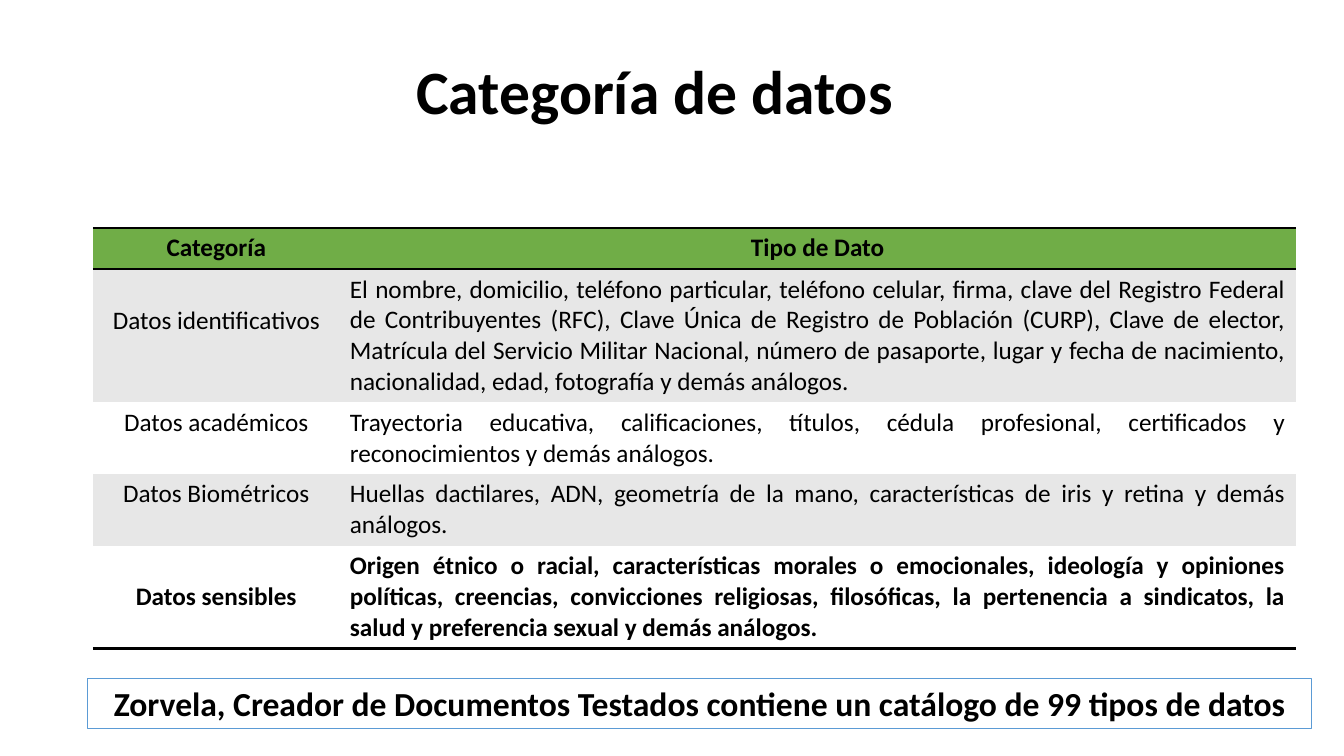
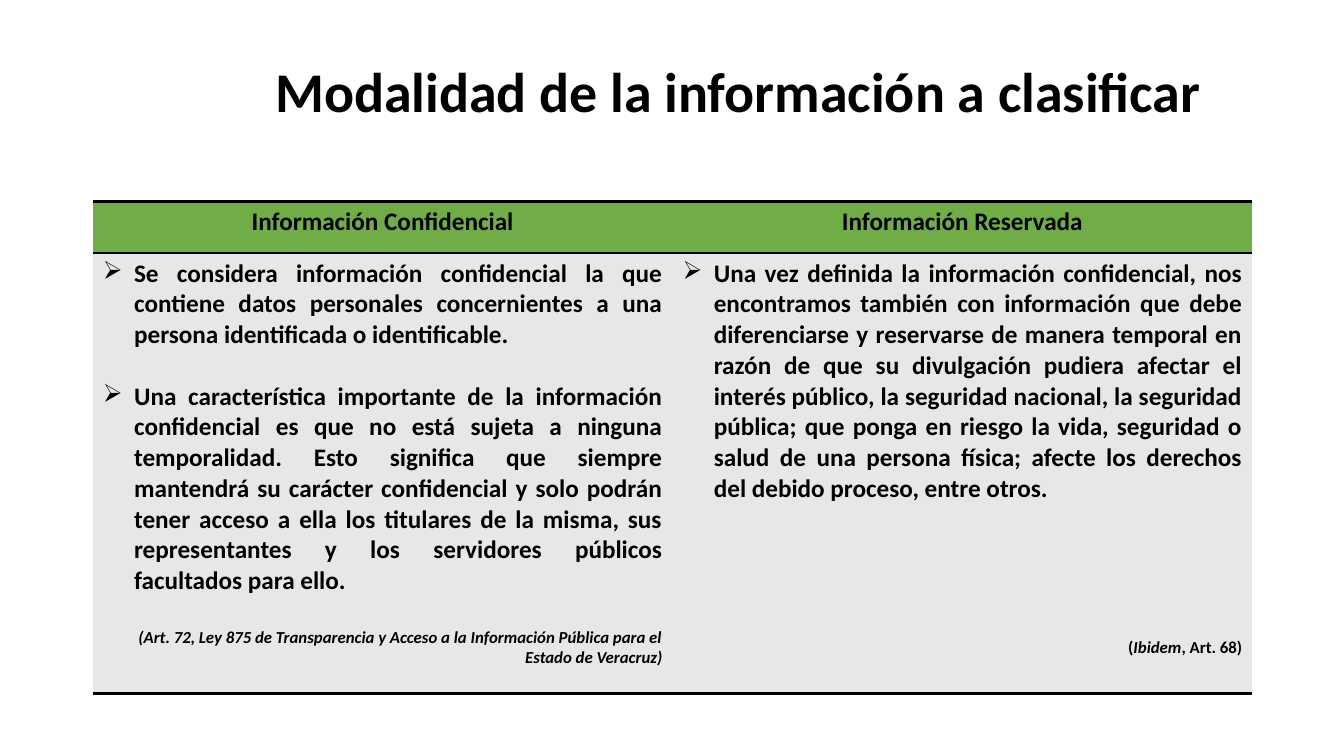
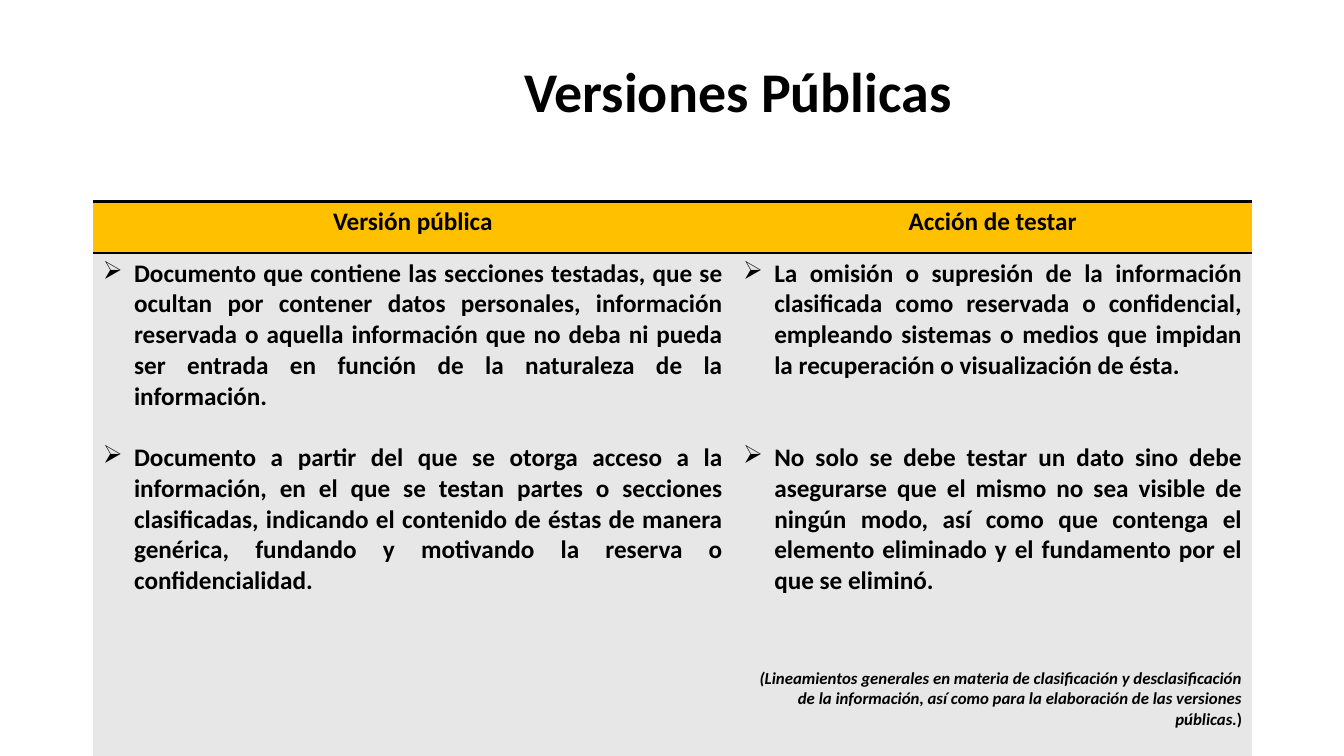
from lxml import etree
from pptx import Presentation
from pptx.dml.color import RGBColor
from pptx.enum.shapes import MSO_SHAPE
from pptx.enum.text import MSO_ANCHOR, MSO_AUTO_SIZE, PP_ALIGN
from pptx.oxml.ns import qn
from pptx.util import Inches, Pt

BLACK = RGBColor(0x00, 0x00, 0x00)
WHITE = RGBColor(0xFF, 0xFF, 0xFF)
GREEN = RGBColor(0x70, 0xAD, 0x47)
GOLD = RGBColor(0xFF, 0xC0, 0x00)
GREY = RGBColor(0xE7, 0xE7, 0xE7)
BLUE = RGBColor(0x5B, 0x9B, 0xD5)

LEFT, CENTER, RIGHT = PP_ALIGN.LEFT, PP_ALIGN.CENTER, PP_ALIGN.RIGHT
JUSTIFY = PP_ALIGN.JUSTIFY
MIDDLE, NO_FIT = MSO_ANCHOR.MIDDLE, MSO_AUTO_SIZE.NONE
RECT = MSO_SHAPE.RECTANGLE

FONT = "Calibri"
PLAIN = "{2D5ABB26-0587-4C30-8999-92F81FD0307C}"  # table style without grid
BODY, SMALL = 18, 12
LINE, THIN = 22, 14.6  # heights in points of a body line and a small line
EDGE = 0.92
HANG = 0.31
HEAD = 0.51

TYPES = [
    ("Datos identificativos",
     "El nombre, domicilio, teléfono particular, teléfono celular, firma, clave del Registro "
     "Federal de Contribuyentes (RFC), Clave Única de Registro de Población (CURP), Clave de "
     "elector, Matrícula del Servicio Militar Nacional, número de pasaporte, lugar y fecha de "
     "nacimiento, nacionalidad, edad, fotografía y demás análogos."),
    ("Datos académicos",
     "Trayectoria educativa, calificaciones, títulos, cédula profesional, certificados y "
     "reconocimientos y demás análogos."),
    ("Datos Biométricos",
     "Huellas dactilares, ADN, geometría de la mano, características de iris y retina y demás "
     "análogos."),
    ("Datos sensibles",
     "Origen étnico o racial, características morales o emocionales, ideología y opiniones "
     "políticas, creencias, convicciones religiosas, filosóficas, la pertenencia a sindicatos, "
     "la salud y preferencia sexual y demás análogos."),
]

# Each column: heading, bullets as (space before, text), source as (space before, runs)
MODES = [
    ("Información Confidencial",
     [(0, "Se considera información confidencial la que contiene datos personales "
          "concernientes a una persona identificada o identificable."),
      (LINE, "Una característica importante de la información confidencial es que no está "
             "sujeta a ninguna temporalidad. Esto significa que siempre mantendrá su carácter "
             "confidencial y solo podrán tener acceso a ella los titulares de la misma, sus "
             "representantes y los servidores públicos facultados para ello.")],
     (LINE, [("(Art. 72, Ley 875 de Transparencia y Acceso a la Información Pública para el "
              "Estado de Veracruz)", True)])),
    ("Información Reservada",
     [(0, "Una vez definida la información confidencial, nos encontramos también con "
          "información que debe diferenciarse y reservarse de manera temporal en razón de que "
          "su divulgación pudiera afectar el interés público, la seguridad nacional, la "
          "seguridad pública; que ponga en riesgo la vida, seguridad o salud de una persona "
          "física; afecte los derechos del debido proceso, entre otros.")],
     (3 * LINE + 2 * THIN, [("(", False), ("Ibidem", True), (", Art. 68)", False)])),
]

VERSIONS = [
    ("Versión pública",
     [(0, "Documento que contiene las secciones testadas, que se ocultan por contener datos "
          "personales, información reservada o aquella información que no deba ni pueda ser "
          "entrada en función de la naturaleza de la información."),
      (LINE, "Documento a partir del que se otorga acceso a la información, en el que se "
             "testan partes o secciones clasificadas, indicando el contenido de éstas de "
             "manera genérica, fundando y motivando la reserva o confidencialidad.")],
     None),
    ("Acción de testar",
     [(0, "La omisión o supresión de la información clasificada como reservada o "
          "confidencial, empleando sistemas o medios que impidan la recuperación o "
          "visualización de ésta."),
      (2 * LINE, "No solo se debe testar un dato sino debe asegurarse que el mismo no sea "
                 "visible de ningún modo, así como que contenga el elemento eliminado y el "
                 "fundamento por el que se eliminó.")],
     (LINE + 2 * THIN, [("(Lineamientos generales en materia de clasificación y "
                         "desclasificación de la información, así como para la elaboración de "
                         "las versiones públicas.", True), (")", False)])),
]


def style(run, size=BODY, bold=True, italic=False):
    font = run.font
    font.name, font.size = FONT, Pt(size)
    font.bold, font.italic = bold, italic
    font.color.rgb = BLACK


def write(par, text, align, size=BODY, bold=True):
    par.text = text
    par.alignment = align
    style(par.runs[0], size, bold)


def rule(cell, side):
    """Draw a black line on one side ("T" or "B") of a cell."""
    line = etree.SubElement(cell._tc.get_or_add_tcPr(), qn("a:ln" + side), w=str(Pt(2)))
    fill = etree.SubElement(line, qn("a:solidFill"))
    etree.SubElement(fill, qn("a:srgbClr"), val=str(BLACK))


def paint(cell, color, sides=""):
    """Lines come before the fill, as the file format asks."""
    for side in sides:
        rule(cell, side)
    cell.fill.solid()
    cell.fill.fore_color.rgb = color


def add_title(deck, text, width, size):
    slide = deck.slides.add_slide(deck.slide_layouts[5])
    title = slide.shapes.title
    title.left, title.top = Inches(2.55), Inches(0.49)
    title.width, title.height = Inches(width), Inches(0.81)
    title.fill.solid()
    title.fill.fore_color.rgb = WHITE
    frame = title.text_frame
    frame.auto_size, frame.vertical_anchor = NO_FIT, MIDDLE
    frame.word_wrap = True
    write(frame.paragraphs[0], text, CENTER, size)
    return slide


def add_grid(slide, top, cols, rows, heads, color):
    """Place a plain table with its heading row filled in."""
    frame = slide.shapes.add_table(len(rows), len(cols), Inches(EDGE), Inches(top),
                                   Inches(sum(cols)), Inches(sum(rows)))
    table = frame.table
    table._tbl.tblPr.find(qn("a:tableStyleId")).text = PLAIN
    table.horz_banding = False
    for col, width in zip(table.columns, cols):
        col.width = Inches(width)
    for row, height in zip(table.rows, rows):
        row.height = Inches(height)
    for cell, head in zip(table.rows[0].cells, heads):
        write(cell.text_frame.paragraphs[0], head, CENTER)
        paint(cell, color, "TB")
    return table


def add_bullet(par, gap, text):
    props = par._p.get_or_add_pPr()
    props.set("marL", str(Inches(HANG)))
    props.set("indent", str(-Inches(HANG)))
    if gap:
        par.space_before = Pt(gap)
    etree.SubElement(props, qn("a:buChar"), char="➢")
    write(par, text, JUSTIFY)


def add_source(par, gap, parts):
    par.alignment = RIGHT
    par.space_before = Pt(gap)
    for text, italic in parts:
        run = par.add_run()
        run.text = text
        style(run, SMALL, italic=italic)


def fill_cell(cell, bullets, source):
    frame = cell.text_frame
    for i, (gap, text) in enumerate(bullets):
        add_bullet(frame.add_paragraph() if i else frame.paragraphs[0], gap, text)
    if source:
        add_source(frame.add_paragraph(), *source)


def add_note(slide, text):
    box = slide.shapes.add_shape(RECT, Inches(0.87), Inches(6.73), Inches(12.14), Inches(0.5))
    box.shadow.inherit = False
    box.fill.solid()
    box.fill.fore_color.rgb = WHITE
    box.line.color.rgb, box.line.width = BLUE, Pt(1)
    box.text_frame.word_wrap = True
    box.text_frame.vertical_anchor = MIDDLE
    write(box.text_frame.paragraphs[0], text, CENTER, 24)


def type_slide(deck):
    slide = add_title(deck, "Categoría de datos", 7.89, 44)
    table = add_grid(slide, 2.26, [2.45, 9.48], [0.41, 1.32, 0.71, 0.71, 1.02],
                     ["Categoría", "Tipo de Dato"], GREEN)
    last = len(TYPES)
    for i, texts in enumerate(TYPES, 1):
        cells = table.rows[i].cells
        for cell, text, align in zip(cells, texts, (CENTER, JUSTIFY)):
            write(cell.text_frame.paragraphs[0], text, align, bold=i == last)
            paint(cell, GREY if i % 2 else WHITE, "B" if i == last else "")
        if i in (1, last):
            cells[0].margin_top = Inches(0.36)
    add_note(slide, "Zorvela, Creador de Documentos Testados contiene un catálogo de 99 "
                    "tipos de datos")


def pair_slide(deck, title, cols, height, color, pair, sides):
    """Two columns side by side, each with bullets and a source."""
    slide = add_title(deck, title, 9.54, 40)
    table = add_grid(slide, 2, cols, [HEAD, height], [part[0] for part in pair], color)
    for cell, (_, bullets, source) in zip(table.rows[1].cells, pair):
        fill_cell(cell, bullets, source)
        paint(cell, GREY, sides)


def main():
    deck = Presentation()
    deck.slide_width, deck.slide_height = Inches(13.33), Inches(7.5)
    type_slide(deck)
    pair_slide(deck, "Modalidad de la información a clasificar", [5.75, 5.75], 4.37,
               GREEN, MODES, "B")
    pair_slide(deck, "Versiones Públicas", [6.35, 5.15], 4.99, GOLD, VERSIONS, "")
    deck.save("out.pptx")


if __name__ == "__main__":
    main()
